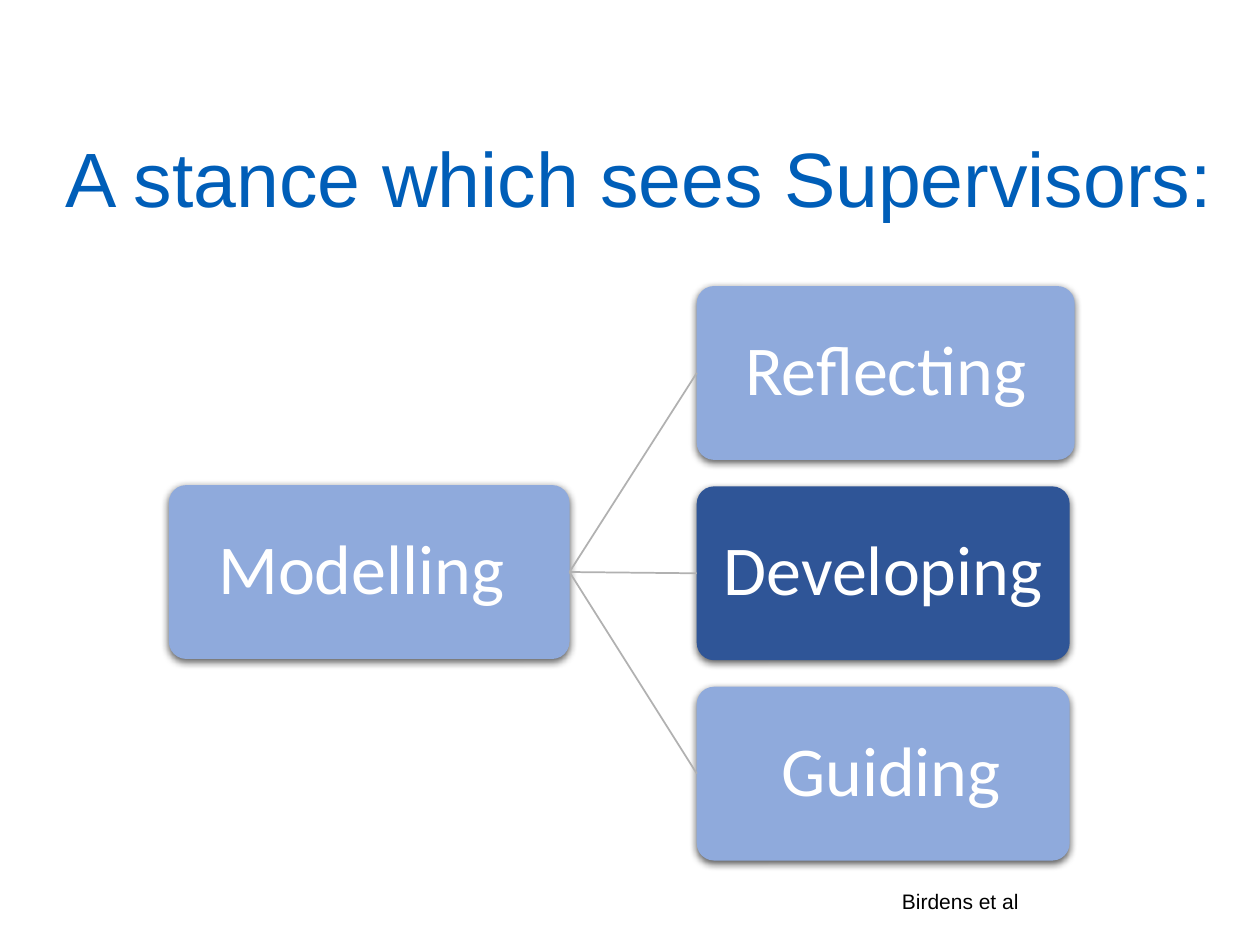
from lxml.etree import SubElement
from pptx import Presentation
from pptx.dml.color import RGBColor
from pptx.enum.shapes import MSO_CONNECTOR, MSO_SHAPE
from pptx.enum.text import MSO_ANCHOR, MSO_AUTO_SIZE, PP_ALIGN
from pptx.oxml.ns import qn
from pptx.util import Inches, Pt

TITLE_BLUE = RGBColor(0x00, 0x5E, 0xB8)
LIGHT_BLUE = RGBColor(0x8F, 0xAA, 0xDC)
DARK_BLUE = RGBColor(0x2F, 0x55, 0x97)
LINE_GREY = RGBColor(0xB1, 0xB1, 0xB1)
WHITE = RGBColor(0xFF, 0xFF, 0xFF)
BLACK = RGBColor(0, 0, 0)

BOX_HEIGHT = 1.38
BRANCH_LEFT = 5.53
BRANCH_TOP = 2.27
BRANCH_STEP = 1.59


def write_text(shape, text, font_name, size, color, alignment, frame_format):
    frame = shape.text_frame
    for name, value in frame_format.items():
        setattr(frame, name, value)
    paragraph = frame.paragraphs[0]
    paragraph.alignment = alignment
    run = paragraph.add_run()
    run.text = text
    run.font.name = font_name
    run.font.size = Pt(size)
    run.font.color.rgb = color
    return paragraph


def add_box(slide, text, left, top, width, fill):
    """Add a rounded box with a soft shadow below and centred white text."""
    box = slide.shapes.add_shape(
        MSO_SHAPE.ROUNDED_RECTANGLE,
        Inches(left), Inches(top), Inches(width), Inches(BOX_HEIGHT))
    box.adjustments[0] = 0.1
    box.fill.solid()
    box.fill.fore_color.rgb = fill
    box.line.fill.background()
    box.shadow.inherit = False
    effects = box._element.spPr.find(qn("a:effectLst"))
    shadow = SubElement(
        effects, qn("a:outerShdw"), blurRad=str(Pt(4.5)), dist=str(Pt(1.5)),
        dir="5400000", algn="ctr", rotWithShape="0")
    shadow_color = SubElement(shadow, qn("a:srgbClr"), val="000000")
    SubElement(shadow_color, qn("a:alpha"), val="63000")
    margins = ("margin_left", "margin_top", "margin_right", "margin_bottom")
    frame_format = dict.fromkeys(margins, Inches(0.03))
    frame_format.update(word_wrap=True, vertical_anchor=MSO_ANCHOR.MIDDLE)
    paragraph = write_text(box, text, "Calibri", 40, WHITE, PP_ALIGN.CENTER, frame_format)
    paragraph.line_spacing = 0.9
    return box


presentation = Presentation()
presentation.slide_width = Inches(10)
presentation.slide_height = Inches(7.5)
slide = presentation.slides.add_slide(presentation.slide_layouts[5])

title = slide.shapes.title
title.left, title.top = Inches(0.42), Inches(1.07)
title.width, title.height = Inches(9.4), Inches(0.77)
title_paragraph = write_text(
    title, "A stance which sees Supervisors:", "Arial", 44, TITLE_BLUE, PP_ALIGN.LEFT,
    {"word_wrap": False, "auto_size": MSO_AUTO_SIZE.SHAPE_TO_FIT_TEXT,
     "vertical_anchor": MSO_ANCHOR.TOP})
title_paragraph.line_spacing = 0.9

root = add_box(slide, "Modelling ", 1.34, 3.85, 3.18, LIGHT_BLUE)

branches = [
    ("Reflecting", 3.0, LIGHT_BLUE),
    ("Developing", 2.96, DARK_BLUE),
    (" Guiding", 2.96, LIGHT_BLUE),
]
for index, (text, width, fill) in enumerate(branches):
    branch = add_box(slide, text, BRANCH_LEFT, BRANCH_TOP + index * BRANCH_STEP, width, fill)
    connector = slide.shapes.add_connector(MSO_CONNECTOR.STRAIGHT, 0, 0, 0, 0)
    connector.begin_connect(root, 3)
    connector.end_connect(branch, 1)
    connector.line.color.rgb = LINE_GREY
    connector.line.width = Pt(1)
    SubElement(connector._element.spPr, qn("a:effectLst"))

credit = slide.shapes.add_textbox(Inches(7.06), Inches(6.95), Inches(2.25), Inches(0.4))
credit_paragraph = write_text(
    credit, "Birdens et al", "Arial", 12, BLACK, PP_ALIGN.LEFT,
    {"word_wrap": True, "vertical_anchor": MSO_ANCHOR.MIDDLE})
credit_paragraph.space_after = Pt(4.5)

presentation.save("out.pptx")
